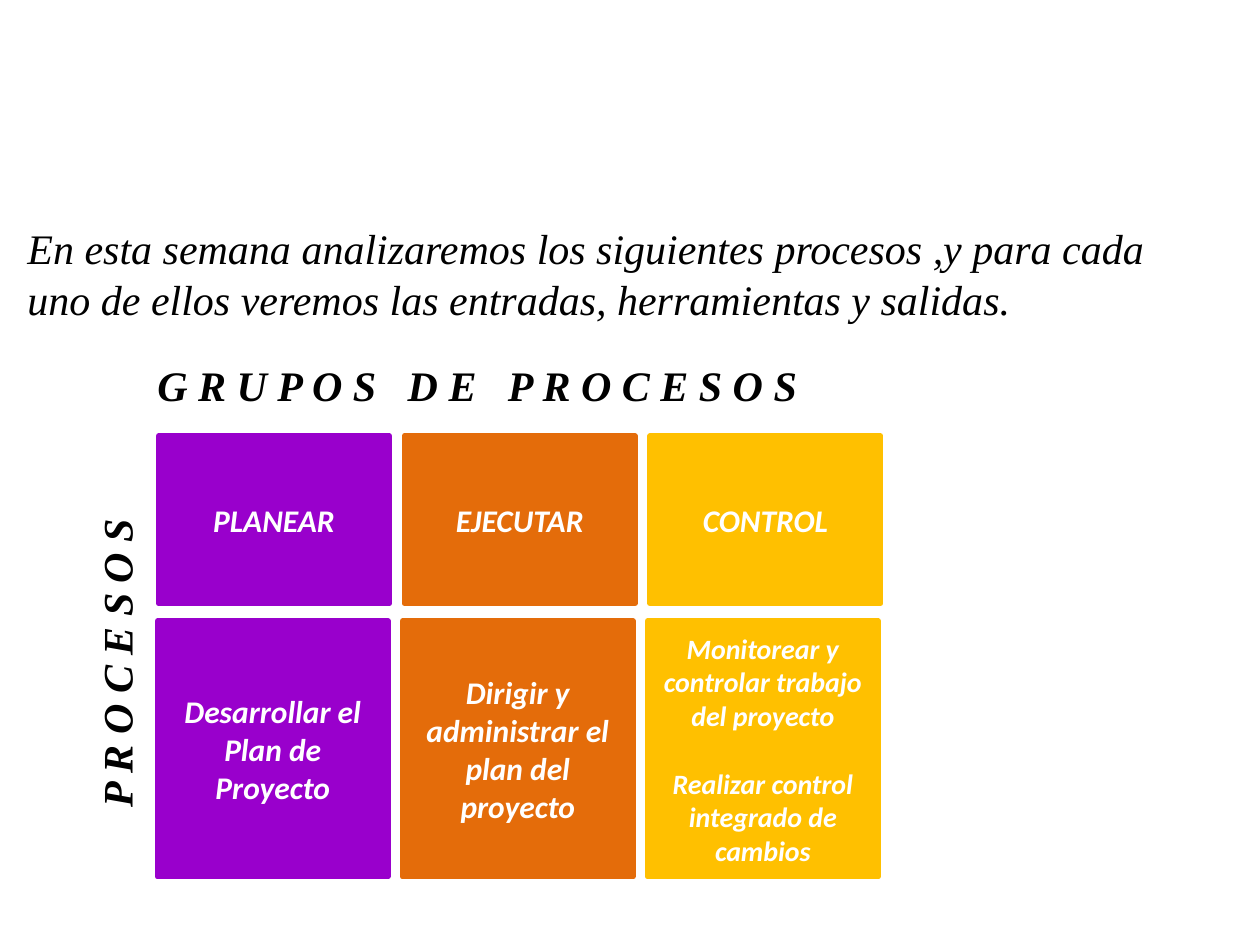
import pptx
import pptx.dml.color
import pptx.enum.shapes
import pptx.enum.text
import pptx.util

RGBColor = pptx.dml.color.RGBColor
BLACK = RGBColor(0x00, 0x00, 0x00)
WHITE = RGBColor(0xFF, 0xFF, 0xFF)
PURPLE = RGBColor(0x99, 0x00, 0xCC)
ORANGE = RGBColor(0xE4, 0x6C, 0x0A)
YELLOW = RGBColor(0xFF, 0xC0, 0x00)

COLS, ROWS = 100, 75  # grid cells across and down the slide


class Page:
    """Holds the text style and the current slide."""
    serif, sans = "Times New Roman", "Calibri"
    large = 24

    def __init__(self, deck):
        self.slide = deck.slides.add_slide(deck.slide_layouts[6])
        self.col = deck.slide_width / COLS
        self.row = deck.slide_height / ROWS

    def place(self, left, top, width, height):
        return (round(left * self.col), round(top * self.row),
                round(width * self.col), round(height * self.row))

    def style(self, para, name, size, color, bold):
        font = para.font
        font.name, font.size = name, pptx.util.Pt(size)
        font.bold, font.italic = bold, True
        font.color.rgb = color

    def label(self, text, area, bold=True, wrap=True, turn=0):
        box = self.slide.shapes.add_textbox(*self.place(*area))
        box.rotation = turn
        frame = box.text_frame
        frame.word_wrap = wrap
        frame.auto_size = pptx.enum.text.MSO_AUTO_SIZE.SHAPE_TO_FIT_TEXT
        frame.text = text
        self.style(frame.paragraphs[0], self.serif, self.large, BLACK, bold)

    def tile(self, lines, area, color, size):
        tile = self.slide.shapes.add_shape(
            pptx.enum.shapes.MSO_SHAPE.RECTANGLE, *self.place(*area))
        tile.shadow.inherit = False
        tile.fill.solid()
        tile.fill.fore_color.rgb = color
        tile.line.color.rgb = color
        tile.line.width = pptx.util.Pt(3)
        frame = tile.text_frame
        frame.word_wrap = True
        frame.vertical_anchor = pptx.enum.text.MSO_ANCHOR.MIDDLE
        frame.text = "\n".join(lines)
        for i, para in enumerate(frame.paragraphs):
            para.alignment = pptx.enum.text.PP_ALIGN.CENTER
            if i:
                para.space_before = pptx.util.Pt(19.5)
            self.style(para, self.sans, size, WHITE, True)


def main():
    deck = pptx.Presentation()
    deck.slide_width = pptx.util.Inches(10)
    deck.slide_height = pptx.util.Inches(7.5)
    page = Page(deck)

    # Introduction
    page.label("En esta semana analizaremos los siguientes procesos ,y para "
               "cada uno de ellos veremos las entradas, herramientas y "
               "salidas.", (1.2, 17.2, 93.7, 9.1), bold=False)

    # Axis titles, with their letters spaced out
    page.label(" ".join("GRUPOS DE PROCESOS"), (11.5, 28, 54.7, 4.9),
               wrap=False)
    page.label(" ".join("PROCESOS"), (-3.3, 50, 25.1, 5.1), turn=270)

    # One column per process group: heading above, processes below
    groups = [
        (PURPLE, "PLANEAR", ["Desarrollar el Plan de Proyecto"], 18),
        (ORANGE, "EJECUTAR", ["Dirigir y administrar el plan del proyecto"],
         18),
        (YELLOW, "CONTROL", ["Monitorear y controlar trabajo del proyecto",
                             "Realizar control integrado de cambios"], 16),
    ]
    for i, (color, head, tasks, size) in enumerate(groups):
        page.tile([head], (12.6 + 19.5 * i, 34.6, 18.3, 13.3), color, 18)
        page.tile(tasks, (12.5 + 19.45 * i, 49.3, 18.3, 20.3), color, size)

    deck.save("out.pptx")


if __name__ == "__main__":
    main()
